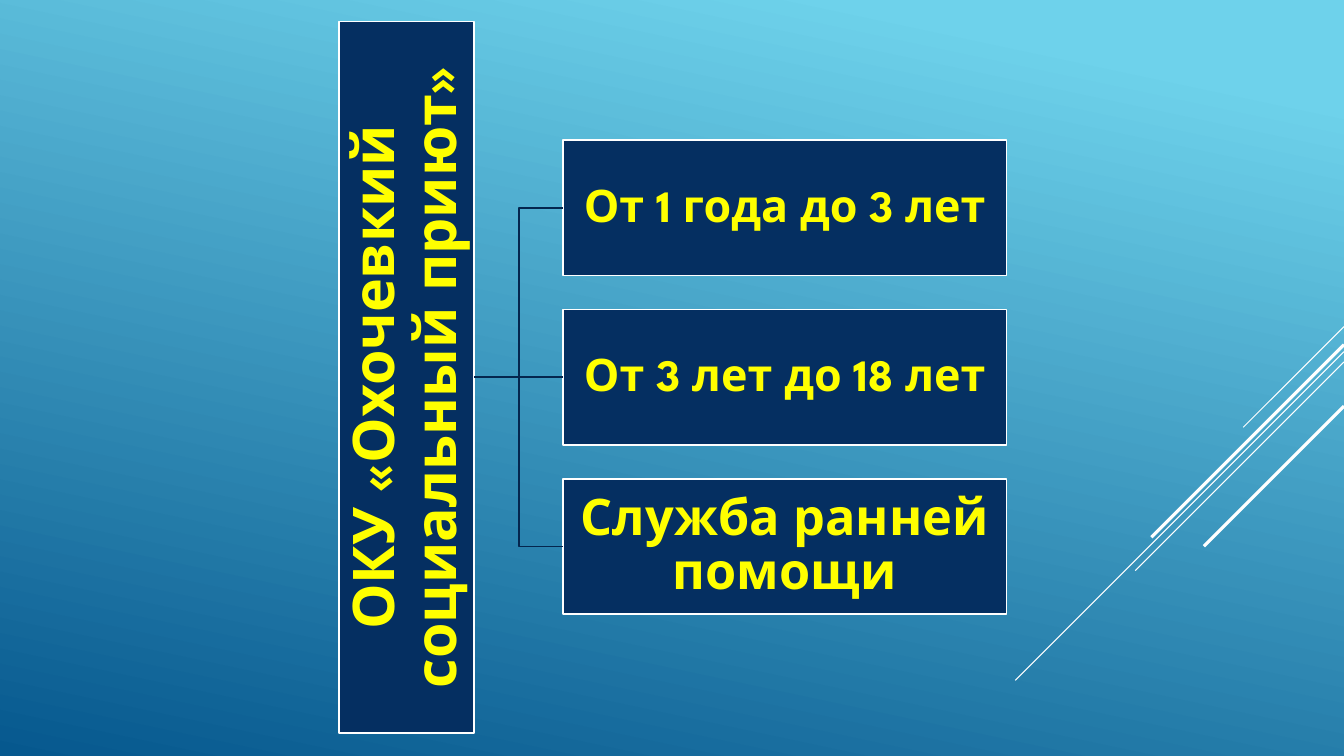
from dataclasses import dataclass

from lxml.etree import SubElement
from pptx import Presentation
from pptx.dml.color import RGBColor
from pptx.enum.shapes import MSO_CONNECTOR, MSO_SHAPE
from pptx.enum.text import MSO_ANCHOR, PP_ALIGN
from pptx.oxml.ns import qn
from pptx.shapes.autoshape import Shape
from pptx.shapes.connector import Connector
from pptx.slide import Slide
from pptx.util import Inches, Pt


@dataclass(frozen=True)
class Theme:
    font: str = "League Spartan"
    sky: str = "6ED2EB"
    deep: str = "06588E"
    box: str = "052F61"
    link: str = "04264E"
    white: str = "FFFFFF"
    text: str = "FFFF00"
    facility_size: int = 41
    age_size: int = 32
    service_size: int = 36
    outline: float = 1.25
    thin: float = 0.75
    thick: float = 2.25


@dataclass(frozen=True)
class Stripe:
    """A diagonal from the right edge; lengths are percent of slide height."""
    top: float
    run: float
    weight: float


@dataclass(frozen=True)
class Box:
    """Centre in grid columns and rows, with its size."""
    text: str
    column: float
    row: float
    width: int
    height: int
    size: int
    inset: float


THEME = Theme()
WIDTH, HEIGHT = Inches(13.33), Inches(7.5)

# Grid starts at the middle of the facility box's right side
ORIGIN_X, ORIGIN_Y = Pt(338.7), Pt(269.4)
COLUMN, ROW = Inches(0.44), Inches(1.68) // 5
BOX_ROWS, PITCH_ROWS, FACILITY_ROWS = 4, 5, 21
BRANCH_COLUMNS, GAP_COLUMNS = 10, 2

STRIPES = [
    Stripe(43.2, 13.33, THEME.thin),
    Stripe(46.53, 43.47, THEME.thin),
    Stripe(47.87, 27.6, THEME.thin),
    Stripe(45.6, 25.47, THEME.thick),
    Stripe(53.73, 18.53, THEME.thick),
]
FACILITY = Box("ОКУ «Охочевкий социальный приют»", -BOX_ROWS / 2 * ROW / COLUMN, 0,
               FACILITY_ROWS * ROW, BOX_ROWS * ROW, THEME.facility_size, 0.03)
BRANCHES = [
    Box(text, GAP_COLUMNS + BRANCH_COLUMNS / 2, PITCH_ROWS * step,
        BRANCH_COLUMNS * COLUMN, BOX_ROWS * ROW, size, inset)
    for step, text, size, inset in [
        (-1, "От 1 года до 3 лет", THEME.age_size, 0.02),
        (0, "От 3 лет до 18 лет", THEME.age_size, 0.02),
        (1, "Служба ранней помощи", THEME.service_size, 0.03),
    ]
]


def color(value: str) -> RGBColor:
    return RGBColor.from_string(value)


def apply(target: object, values: dict) -> None:
    for name, value in values.items():
        setattr(target, name, value)


def paint_background(slide: Slide) -> None:
    fill = slide.background.fill
    fill.gradient()
    fill.gradient_angle = 258
    for stop, position, value in zip(fill.gradient_stops, (0.1, 1), (THEME.sky, THEME.deep)):
        stop.position = position
        stop.color.rgb = color(value)


def style_connector(connector: Connector, value: str, weight: float) -> None:
    connector.line.color.rgb = color(value)
    connector.line.width = Pt(weight)
    SubElement(connector._element.spPr, qn("a:effectLst"))


def draw_stripe(slide: Slide, stripe: Stripe) -> None:
    top, run = (int(HEIGHT * share / 100) for share in (stripe.top, stripe.run))
    connector = slide.shapes.add_connector(
        MSO_CONNECTOR.STRAIGHT, WIDTH, top, WIDTH - run, top + run)
    style_connector(connector, THEME.white, stripe.weight)


def draw_box(slide: Slide, box: Box, rotation: int = 0) -> Shape:
    left = int(ORIGIN_X + box.column * COLUMN - box.width / 2)
    top = int(ORIGIN_Y + box.row * ROW - box.height / 2)
    shape = slide.shapes.add_shape(MSO_SHAPE.RECTANGLE, left, top, box.width, box.height)
    shape.rotation = rotation
    shape.shadow.inherit = False
    shape.fill.solid()
    shape.fill.fore_color.rgb = color(THEME.box)
    shape.line.color.rgb = color(THEME.white)
    shape.line.width = Pt(THEME.outline)

    frame = shape.text_frame
    margins = ("margin_left", "margin_top", "margin_right", "margin_bottom")
    apply(frame, {"word_wrap": True, "vertical_anchor": MSO_ANCHOR.MIDDLE,
                  **dict.fromkeys(margins, Inches(box.inset))})
    paragraph = frame.paragraphs[0]
    apply(paragraph, {"alignment": PP_ALIGN.CENTER, "line_spacing": 0.9})
    run = paragraph.add_run()
    run.text = box.text
    apply(run.font, {"name": THEME.font, "size": Pt(box.size), "bold": True})
    run.font.color.rgb = color(THEME.text)
    return shape


def draw_link(slide: Slide, facility: Shape, branch: Shape) -> None:
    connector = slide.shapes.add_connector(
        MSO_CONNECTOR.ELBOW, ORIGIN_X, ORIGIN_Y, branch.left, ORIGIN_Y)
    # The turned facility box has its bottom side on the right
    connector.begin_connect(facility, 2)
    connector.end_connect(branch, 1)
    apply(connector, {"begin_x": ORIGIN_X, "begin_y": ORIGIN_Y})
    style_connector(connector, THEME.link, THEME.outline)


def main() -> None:
    presentation = Presentation()
    apply(presentation, {"slide_width": WIDTH, "slide_height": HEIGHT})
    slide = presentation.slides.add_slide(presentation.slide_layouts[6])

    # Background and diagonal stripes
    paint_background(slide)
    for stripe in STRIPES:
        draw_stripe(slide, stripe)

    # Facility and its branches
    facility = draw_box(slide, FACILITY, rotation=270)
    for box in BRANCHES:
        draw_link(slide, facility, draw_box(slide, box))

    presentation.save("out.pptx")


if __name__ == "__main__":
    main()
